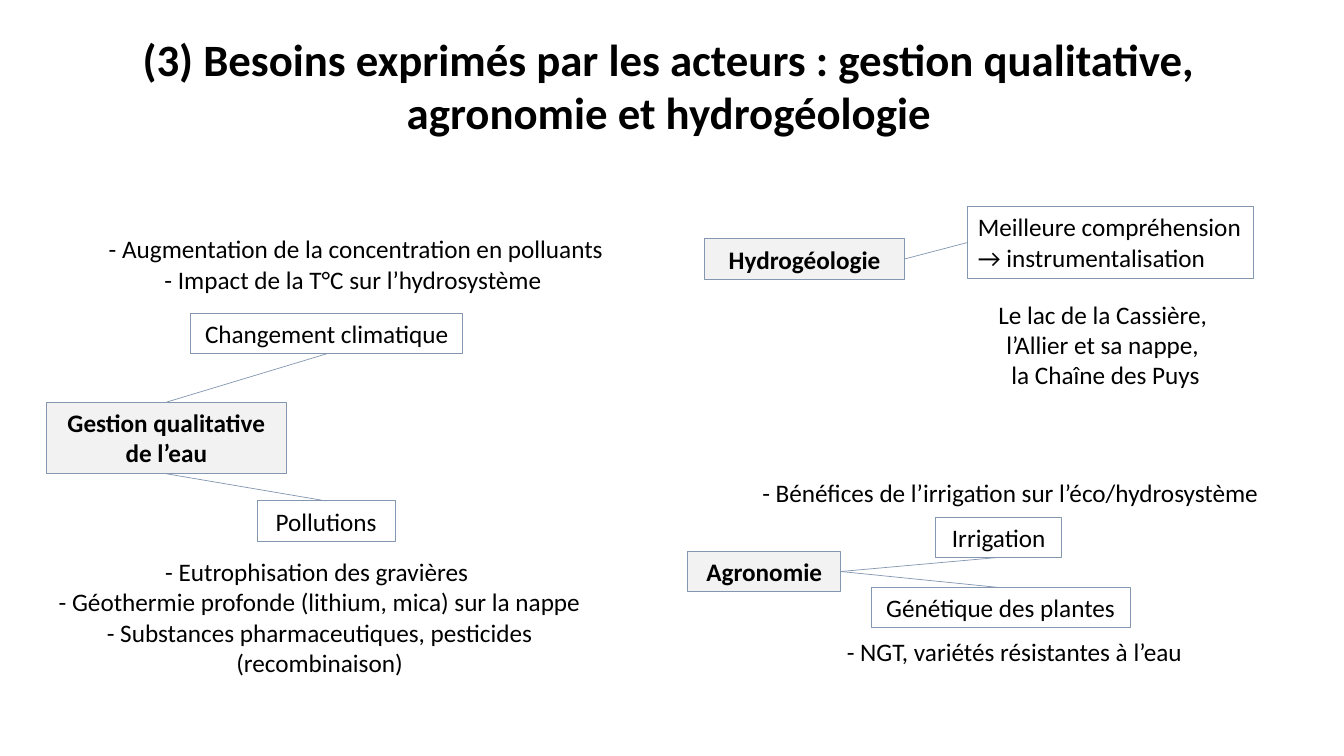
"""Builds the slide on the needs expressed by water stakeholders."""
from lxml import etree
from pptx import Presentation
from pptx import util as u
from pptx.dml.color import RGBColor
from pptx.enum import shapes, text
from pptx.oxml.ns import qn

PX = 9144
COLOURS = {"ink": "000000", "theme": "F2F2F2", "line": "8497B0"}
TOP, LEFT, BOTTOM, RIGHT = range(4)


class Board:
    """Holds the style and the current slide."""

    def __init__(self, prs):
        self.s = prs.slides.add_slide(prs.slide_layouts[5])
        self.font = {"name": "Calibri", "size": u.Pt(18), "bold": False}
        self.frame = {
            "word_wrap": True,
            "auto_size": text.MSO_AUTO_SIZE.SHAPE_TO_FIT_TEXT,
            "vertical_anchor": text.MSO_ANCHOR.TOP,
        }

    def colour(self, name):
        return RGBColor.from_string(COLOURS[name])

    def set_text(self, sp, words, align=text.PP_ALIGN.CENTER, **changes):
        tf = sp.text_frame
        tf.text = words
        for key, value in self.frame.items():
            setattr(tf, key, value)
        for p in tf.paragraphs:
            p.alignment = align
            for r in p.runs:
                for key, value in {**self.font, **changes}.items():
                    setattr(r.font, key, value)
                r.font.color.rgb = self.colour("ink")

    def title(self, words, *place):
        sp = self.s.shapes.title
        for key, value in zip(("left", "top", "width", "height"), place):
            setattr(sp, key, value * PX)
        self.set_text(sp, words, size=u.Pt(32), bold=True)

    def note(self, words, *place):
        sp = self.s.shapes.add_textbox(*(v * PX for v in place))
        self.set_text(sp, words)

    def box(self, words, *place, theme=False, align=text.PP_ALIGN.CENTER):
        sp = self.s.shapes.add_shape(
            shapes.MSO_SHAPE.RECTANGLE, *(v * PX for v in place))
        sp.shadow.inherit = False
        if theme:
            sp.fill.solid()
            sp.fill.fore_color.rgb = self.colour("theme")
        else:
            sp.fill.background()
        sp.line.color.rgb = self.colour("line")
        sp.line.width = u.Pt(0.75)
        self.set_text(sp, words, align, bold=theme)
        return sp

    def link(self, start, start_site, end, end_site):
        sp = self.s.shapes.add_connector(
            shapes.MSO_CONNECTOR.STRAIGHT, 0, 0, 0, 0)
        sp.begin_connect(start, start_site)
        sp.end_connect(end, end_site)
        sp.line.color.rgb = self.colour("line")
        sp.line.width = u.Pt(0.5)
        etree.SubElement(sp._element.spPr, qn("a:effectLst"))


def main():
    prs = Presentation()
    prs.slide_width, prs.slide_height = 1333 * PX, 750 * PX
    board = Board(prs)
    board.title("(3) Besoins exprimés par les acteurs : gestion qualitative, \n"
                "agronomie et hydrogéologie ", 2, 26, 1333, 118)

    quality = board.box("Gestion qualitative de l’eau", 46, 399, 238, 71, theme=True)
    climate = board.box("Changement climatique", 189, 311, 270, 40)
    pollution = board.box("Pollutions", 255, 497, 137, 40)
    board.link(quality, TOP, climate, BOTTOM)
    board.link(pollution, TOP, quality, BOTTOM)

    hydro = board.box("Hydrogéologie", 699, 237, 198, 40, theme=True)
    insight = board.box("Meilleure compréhension\n→ instrumentalisation",
                        960, 205, 283, 71, align=text.PP_ALIGN.LEFT)
    board.link(insight, LEFT, hydro, RIGHT)

    agronomy = board.box("Agronomie", 682, 547, 152, 40, theme=True)
    irrigation = board.box("Irrigation", 928, 513, 125, 40)
    genetics = board.box("Génétique des plantes", 864, 583, 257, 40)
    board.link(irrigation, BOTTOM, agronomy, RIGHT)
    board.link(genetics, TOP, agronomy, RIGHT)

    notes = [
        ("- Augmentation de la concentration en polluants\n"
         "- Impact de la T°C sur l’hydrosystème ", 81, 227, 544, 71),
        ("- Eutrophisation des gravières \n"
         "- Géothermie profonde (lithium, mica) sur la nappe\n"
         "- Substances pharmaceutiques, pesticides (recombinaison)",
         14, 547, 606, 131),
        ("- NGT, variétés résistantes à l’eau ", 706, 626, 606, 40),
        ("- Bénéfices de l’irrigation sur l’éco/hydrosystème", 699, 469, 606, 40),
        ("Le lac de la Cassière, \nl’Allier et sa nappe, \nla Chaîne des Puys",
         964, 292, 265, 101),
    ]
    for note in notes:
        board.note(*note)
    prs.save("out.pptx")


if __name__ == "__main__":
    main()
